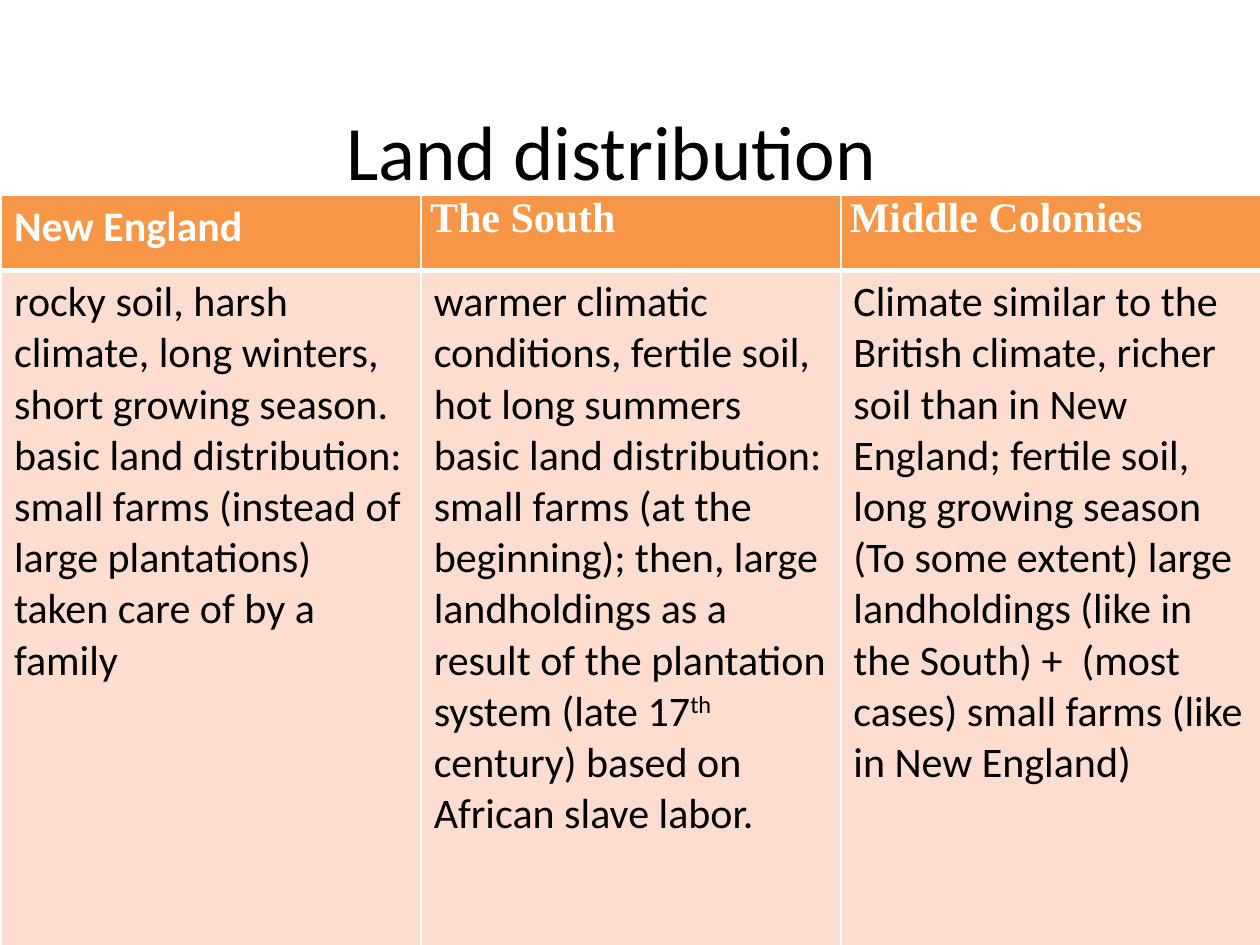
from lxml.etree import SubElement
from pptx import Presentation
from pptx.dml.color import RGBColor as Rgb
from pptx.enum.text import MSO_ANCHOR as Anchor, PP_ALIGN as Align
from pptx.oxml.ns import qn
from pptx.util import Cm, Pt

COLORS = {"header": "F79646", "body": "FCDDCF", "line": "FFFFFF",
          "light": "FFFFFF", "dark": "000000"}
TITLE_FONT = {"name": "Calibri", "size": Pt(44), "bold": False}
HEADER_FONT = {"name": "Calibri", "size": Pt(24), "bold": True}
SERIF_FONT = {**HEADER_FONT, "name": "Times New Roman"}
BODY_FONT = {**HEADER_FONT, "bold": False}
SERIF_MARGINS = {"margin_left": Cm(0.18), "margin_right": Cm(0.18),
                 "margin_top": 0, "margin_bottom": 0}
HEADER_BORDERS = {"L": 1, "R": 1, "T": 1, "B": 3}
BODY_BORDERS = {"L": 1, "R": 1, "T": 3, "B": 1}
COLUMN_WIDTH = Cm(8.46)
ROW_HEIGHTS = (Cm(1.52), Cm(13.77))

REGIONS = [
    ("New England", HEADER_FONT, {}, [
        ["rocky soil, harsh climate, long winters, short growing season."],
        ["basic land distribution: small farms (instead of large plantations) "
         "taken care of by a family"]]),
    ("The South", SERIF_FONT, SERIF_MARGINS, [
        ["warmer climatic conditions, fertile soil, hot long summers"],
        ["basic land distribution: small farms (at the beginning); then, large "
         "landholdings as a result of the plantation system (late 17",
         "th", " century) based on African slave labor."]]),
    ("Middle Colonies", SERIF_FONT, SERIF_MARGINS, [
        ["Climate similar to the British climate, richer soil than in New England; "
         "fertile soil, long growing season"],
        ["(To some extent) large landholdings (like in the South) +  (most cases) "
         "small farms (like in New England)"]]),
]


def apply_format(target, values):
    """Set every attribute named in a dict of format values."""
    for name, value in values.items():
        setattr(target, name, value)


def add_span(para, text, font, color):
    """Add a formatted run to a paragraph and return it."""
    span = para.add_run()
    span.text = text
    apply_format(span.font, font)
    span.font.color.rgb = Rgb.from_string(COLORS[color])
    return span


def add_title(page, text):
    """Place and format the title placeholder."""
    title = page.shapes.title
    apply_format(title, {"left": Cm(0.03), "top": 0,
                         "width": Cm(24.31), "height": Cm(7.92)})
    frame = title.text_frame
    apply_format(frame, {"word_wrap": True, "vertical_anchor": Anchor.MIDDLE,
                         "margin_left": Cm(0.53), "margin_bottom": Cm(2.02)})
    para = frame.paragraphs[0]
    para.alignment = Align.CENTER
    add_span(para, text, TITLE_FONT, "dark")


def style_cell(cell, fill, borders):
    """Give a cell its border lines and then its fill."""
    properties = cell._tc.get_or_add_tcPr()
    for side, width in borders.items():
        line = SubElement(properties, qn(f"a:ln{side}"), w=str(Pt(width)))
        SubElement(SubElement(line, qn("a:solidFill")), qn("a:srgbClr"),
                   val=COLORS["line"])
    cell.fill.solid()
    cell.fill.fore_color.rgb = Rgb.from_string(COLORS[fill])


def fill_cell(cell, paragraphs, font, color):
    """Write paragraphs of spans, raising the ordinal suffix."""
    frame = cell.text_frame
    for index, texts in enumerate(paragraphs):
        para = frame.add_paragraph() if index else frame.paragraphs[0]
        for text in texts:
            span = add_span(para, text, font, color)
            if text == "th":
                span._r.get_or_add_rPr().set("baseline", "30000")


def add_region_table(page):
    """Add one column per region with a header and a description."""
    table = page.shapes.add_table(
        len(ROW_HEIGHTS), len(REGIONS), Cm(0.03), Cm(3.93),
        COLUMN_WIDTH * len(REGIONS), sum(ROW_HEIGHTS)).table
    apply_format(table, {"first_row": False, "horz_banding": False})
    for row, height in zip(table.rows, ROW_HEIGHTS):
        row.height = height
    for index, (name, font, margins, paragraphs) in enumerate(REGIONS):
        table.columns[index].width = COLUMN_WIDTH
        header, body = table.cell(0, index), table.cell(1, index)
        style_cell(header, "header", HEADER_BORDERS)
        style_cell(body, "body", BODY_BORDERS)
        apply_format(header, margins)
        fill_cell(header, [[name]], font, "light")
        fill_cell(body, paragraphs, BODY_FONT, "dark")


def main():
    """Build the land distribution slide."""
    deck = Presentation()
    apply_format(deck, {"slide_width": Cm(25.4), "slide_height": Cm(19.05)})
    page = deck.slides.add_slide(deck.slide_layouts[5])
    add_title(page, "Land distribution")
    add_region_table(page)
    deck.save("out.pptx")


if __name__ == "__main__":
    main()
